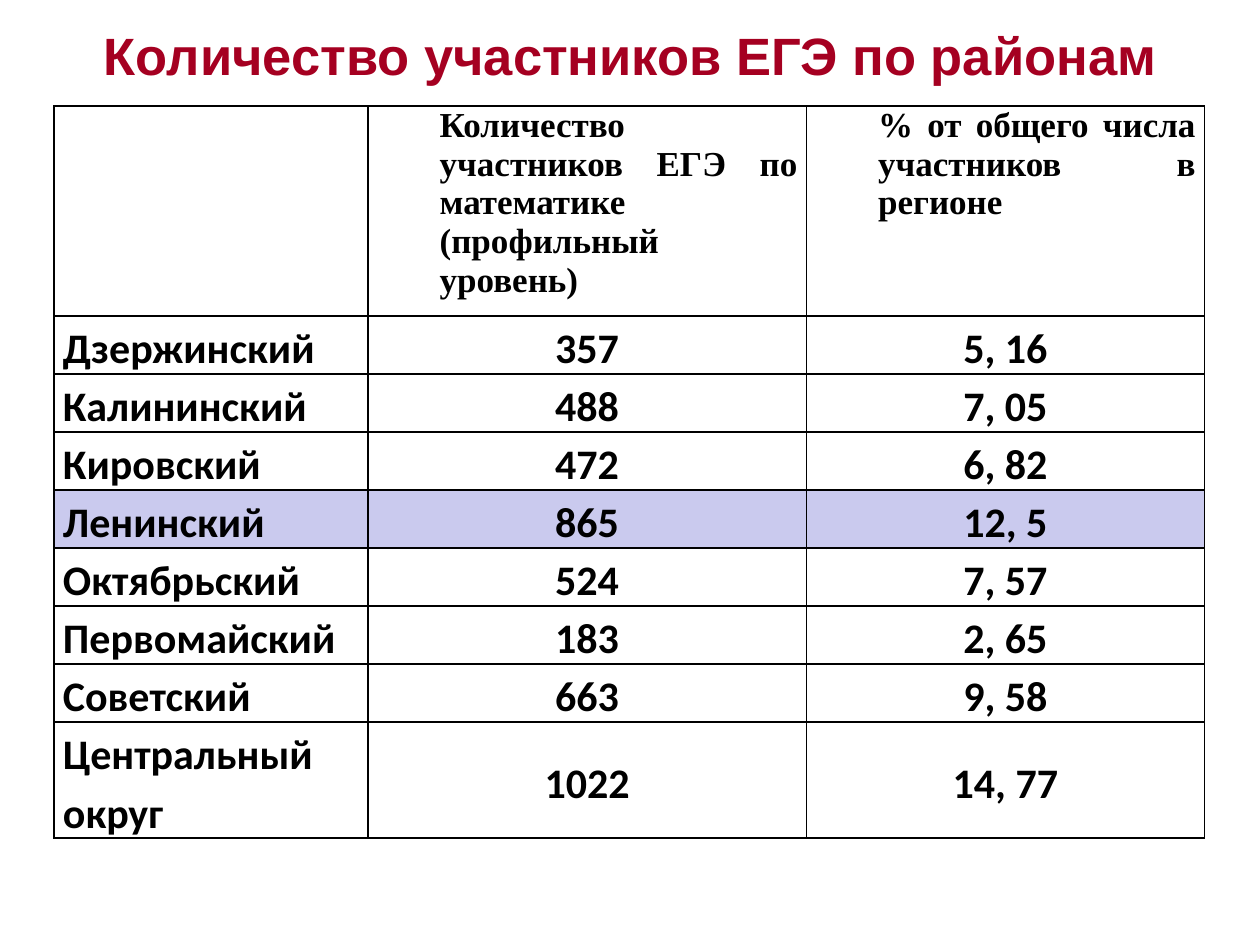
from typing import NamedTuple

from lxml.etree import SubElement
from pptx import Presentation
from pptx.dml.color import RGBColor
from pptx.enum.text import MSO_ANCHOR, PP_ALIGN
from pptx.oxml.ns import qn
from pptx.util import Inches, Pt


class District(NamedTuple):
    name: str
    count: str
    share: str
    height: float = 0.46
    fill: str | None = None


HEADERS = ["", "Количество участников ЕГЭ по математике (профильный уровень)",
           "% от общего числа участников в регионе"]
DISTRICTS = [
    District("Дзержинский", "357", "5, 16"),
    District("Калининский", "488", "7, 05"),
    District("Кировский", "472", "6, 82"),
    District("Ленинский", "865", "12, 5", fill="CACAEE"),
    District("Октябрьский", "524", "7, 57"),
    District("Первомайский", "183", "2, 65"),
    District("Советский", "663", "9, 58"),
    District("Центральный округ", "1022", "14, 77", height=0.92),
]
COL_WIDTHS = [2.49, 3.48, 3.16]
HEADER_HEIGHT = 1.67


def rgb(color: str) -> RGBColor:
    return RGBColor.from_string(color)


def write(tf, text: str, *, font: str, size: float, color: str = "000000",
          align=PP_ALIGN.LEFT, spacing: float = 1.0, indent: float = 0) -> None:
    p = tf.paragraphs[0]
    p.alignment = align
    p.line_spacing = spacing
    if indent:
        pPr = p._p.get_or_add_pPr()
        pPr.set("marL", str(Inches(indent)))
        pPr.set("indent", "0")
    r = p.add_run()
    r.text = text
    r.font.name = font
    r.font.size = Pt(size)
    r.font.bold = True
    r.font.color.rgb = rgb(color)


def format_cell(cell, anchor, fill: str | None = None) -> None:
    cell.margin_left = cell.margin_right = Inches(0.07)
    cell.margin_top = cell.margin_bottom = 0
    cell.vertical_anchor = anchor
    # Borders come before the fill in the cell properties
    tcPr = cell._tc.get_or_add_tcPr()
    for side in ("a:lnL", "a:lnR", "a:lnT", "a:lnB"):
        ln = SubElement(tcPr, qn(side), w=str(Pt(1)))
        SubElement(SubElement(ln, qn("a:solidFill")), qn("a:srgbClr"), val="000000")
    if fill:
        cell.fill.solid()
        cell.fill.fore_color.rgb = rgb(fill)
    else:
        cell.fill.background()


def add_title(s, text: str) -> None:
    tf = s.shapes.add_textbox(Inches(0.28), Inches(0.13),
                              Inches(9.45), Inches(0.61)).text_frame
    tf.word_wrap = True
    write(tf, text, font="Arial", size=30, color="A50021", align=PP_ALIGN.CENTER)


def add_district_table(s, districts: list[District]) -> None:
    heights = [HEADER_HEIGHT] + [d.height for d in districts]
    table = s.shapes.add_table(len(heights), len(COL_WIDTHS), Inches(0.43), Inches(0.84),
                               Inches(sum(COL_WIDTHS)), Inches(sum(heights))).table
    table.first_row = table.horz_banding = False
    for col, width in zip(table.columns, COL_WIDTHS):
        col.width = Inches(width)
    for row, height in zip(table.rows, heights):
        row.height = Inches(height)

    # Header row
    for cell, text in zip(table.rows[0].cells, HEADERS):
        format_cell(cell, MSO_ANCHOR.TOP)
        if text:
            write(cell.text_frame, text, font="Times New Roman", size=20,
                  align=PP_ALIGN.JUSTIFY, indent=0.5)

    # District rows
    for i, d in enumerate(districts, start=1):
        for j, text in enumerate((d.name, d.count, d.share)):
            cell = table.cell(i, j)
            format_cell(cell, MSO_ANCHOR.MIDDLE if j else MSO_ANCHOR.BOTTOM, d.fill)
            write(cell.text_frame, text, font="Calibri", size=24, spacing=1.15,
                  align=PP_ALIGN.CENTER if j else PP_ALIGN.LEFT)


def main() -> None:
    prs = Presentation()
    prs.slide_width, prs.slide_height = Inches(10), Inches(7.5)
    s = prs.slides.add_slide(prs.slide_layouts[6])
    add_title(s, "Количество участников ЕГЭ по районам")
    add_district_table(s, DISTRICTS)
    prs.save("out.pptx")


if __name__ == "__main__":
    main()
